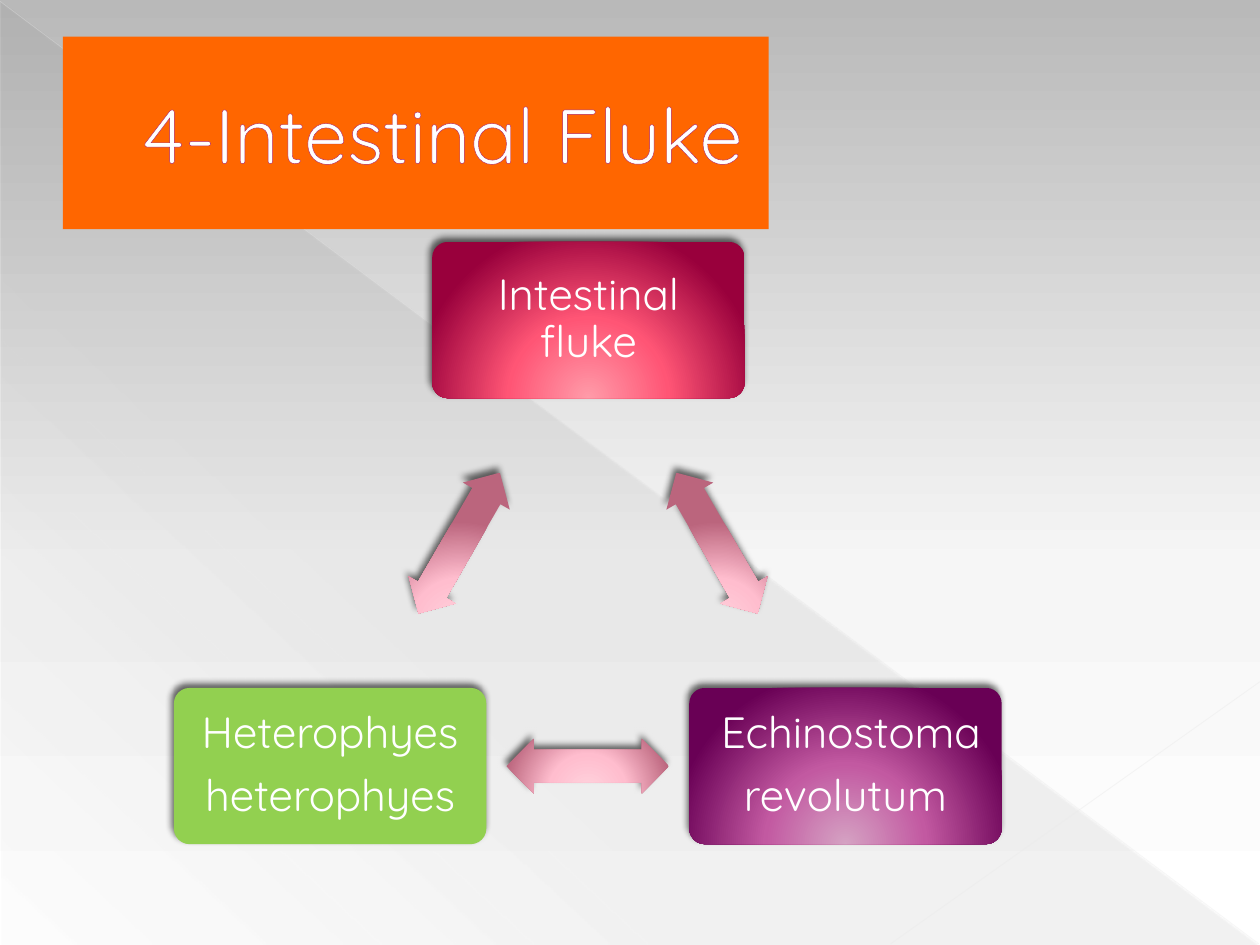
from lxml import etree
from pptx import Presentation
from pptx.dml.color import RGBColor
from pptx.enum.shapes import MSO_CONNECTOR, MSO_SHAPE
from pptx.enum.text import MSO_ANCHOR, PP_ALIGN
from pptx.oxml.ns import qn
from pptx.util import Inches, Pt

RECT = MSO_SHAPE.RECTANGLE
ROUND = MSO_SHAPE.ROUNDED_RECTANGLE
ARROW = MSO_SHAPE.LEFT_RIGHT_ARROW
WEDGE = MSO_SHAPE.RIGHT_TRIANGLE
STRAIGHT = MSO_CONNECTOR.STRAIGHT
MIDDLE = MSO_ANCHOR.MIDDLE
LEFT, CENTER = PP_ALIGN.LEFT, PP_ALIGN.CENTER

FONT = "Quicksand"
COLORS = {
    "white": "FFFFFF", "orange": "FF6600", "edge": "B12761", "green": "92D050",
    "black": "000000", "ray": "E8E8E8", "glint": "EAEAEA",
}
GRADS = {
    "back": [(0, "B9B9B9"), (60, "F6F6F6"), (100, "FFFFFF")],
    "wedge": [(0, "666666", 10), (70, "666666", 8), (100, "666666", 1)],
    "red": [(0, "FF9BA9"), (46, "FF5575"), (100, "99003C")],
    "purple": [(0, "D5A2C3"), (46, "C259A1"), (100, "690055")],
    "pink": [(0, "FFD4DE"), (46, "FFBDCE"), (100, "BB657D")],
}
BOX_W, BOX_H, PAD = 2.48, 1.24, 0.04
ARROW_W, ARROW_H = 1.29, 0.43
NODES = [
    (4.67, 2.54, "red", ["Intestinal fluke"]),
    (6.71, 6.08, "purple", ["Echinostoma ", "revolutum"]),
    (2.62, 6.08, "green", ["Heterophyes", "heterophyes"]),
]


def add_sub(parent, tag, **attrs):
    """Append a drawing element with the given attributes."""
    return etree.SubElement(parent, qn(tag), {k: str(v) for k, v in attrs.items()})


def add_color(parent, color, alpha=100):
    """Append a colour with its opacity in percent."""
    node = add_sub(parent, "a:srgbClr", val=color)
    if alpha < 100:
        add_sub(node, "a:alpha", val=alpha * 1000)


def set_grad(fill, root, name, angle=None):
    """Give a fill a linear gradient, or a glow from below without an angle."""
    fill.gradient()
    grad = root.find(".//" + qn("a:gradFill"))
    for child in list(grad):
        grad.remove(child)
    grad.set("rotWithShape", "0")
    stops = add_sub(grad, "a:gsLst")
    for pos, *color in GRADS[name]:
        add_color(add_sub(stops, "a:gs", pos=pos * 1000), *color)
    if angle is None:
        glow = add_sub(grad, "a:path", path="circle")
        add_sub(glow, "a:fillToRect", l=50000, t=155000, r=50000, b=-55000)
    else:
        add_sub(grad, "a:lin", ang=angle * 60000, scaled=0)


def add_shape(slide, kind, left, top, width, height, fill, angle=None, adj=()):
    """Add a borderless preset shape with a plain or gradient fill."""
    shape = slide.shapes.add_shape(
        kind, Inches(left), Inches(top), Inches(width), Inches(height))
    shape.shadow.inherit = False
    shape.line.fill.background()
    for i, value in enumerate(adj):
        shape.adjustments[i] = value
    if fill in GRADS:
        set_grad(shape.fill, shape._element.spPr, fill, angle)
    else:
        shape.fill.solid()
        shape.fill.fore_color.rgb = RGBColor.from_string(COLORS[fill])
    return shape


def add_shadow(shape):
    """Cast a soft shadow up and to the left."""
    effects = shape._element.spPr.find(qn("a:effectLst"))
    cast = add_sub(effects, "a:outerShdw", blurRad=Pt(4), dist=Pt(3),
                   dir=245 * 60000, rotWithShape=0)
    add_color(cast, COLORS["black"], 60)


def add_line(slide, start, end, color, width, alpha):
    """Add a faint straight line."""
    line = slide.shapes.add_connector(
        STRAIGHT, *[Inches(v) for v in (*start, *end)])
    line.line.color.rgb = RGBColor.from_string(COLORS[color])
    line.line.width = Pt(width)
    props = line._element.spPr
    add_sub(props.find(".//" + qn("a:srgbClr")), "a:alpha", val=alpha * 1000)
    add_sub(props, "a:effectLst")


def set_text(shape, lines, size, align=LEFT, indent=0, inset=None,
             spacing=None, after=None, rtl=False, edge=None):
    """Write lines of white text into a shape."""
    frame = shape.text_frame
    frame.word_wrap = True
    frame.vertical_anchor = MIDDLE
    if inset is not None:
        frame.margin_left = frame.margin_right = Inches(inset)
        frame.margin_top = frame.margin_bottom = Inches(inset)
    for i, text in enumerate(lines):
        para = frame.add_paragraph() if i else frame.paragraphs[0]
        para.alignment = align
        props = para._p.get_or_add_pPr()
        if indent:
            props.set("marL", str(Inches(indent)))
        if rtl:
            props.set("rtl", "1")
        if spacing:
            para.line_spacing = spacing
        if after:
            para.space_after = Pt(0)
            gap = props.find(qn("a:spcAft"))
            gap.remove(gap[0])
            add_sub(gap, "a:spcPct", val=after * 1000)
        run = para.add_run()
        run.text = text
        run.font.name = FONT
        run.font.size = Pt(size)
        run.font.color.rgb = RGBColor.from_string(COLORS["white"])
        if edge:
            rim = add_sub(run.font._element, "a:ln", w=Pt(0.5))
            add_color(add_sub(rim, "a:solidFill"), COLORS[edge])
            run.font._element.insert(0, rim)


def add_node(slide, x, y, fill, lines):
    """Add a rounded box centred on a point, with its label."""
    left, top = x - BOX_W / 2, y - BOX_H / 2
    add_shadow(add_shape(slide, ROUND, left, top, BOX_W, BOX_H, fill, adj=[0.1]))
    label = slide.shapes.add_textbox(
        Inches(left + PAD), Inches(top + PAD),
        Inches(BOX_W - 2 * PAD), Inches(BOX_H - 2 * PAD))
    set_text(label, lines, 25, align=CENTER, inset=0.1, spacing=0.9,
             after=35, rtl=True)


def add_arrow(slide, start, end, turn):
    """Add a double arrow halfway between two nodes."""
    x, y = (start[0] + end[0]) / 2, (start[1] + end[1]) / 2
    arrow = add_shape(slide, ARROW, x - ARROW_W / 2, y - ARROW_H / 2,
                      ARROW_W, ARROW_H, "pink", adj=[0.6, 0.5])
    arrow.rotation = turn
    add_shadow(arrow)


def main():
    """Build the slide and save it."""
    deck = Presentation()
    deck.slide_width, deck.slide_height = Inches(10), Inches(7.5)
    slide = deck.slides.add_slide(deck.slide_layouts[6])
    set_grad(slide.background.fill, slide._element, "back", 90)
    add_shape(slide, WEDGE, 0.01, 0.02, 9.98, 7.48, "wedge", 133)
    add_line(slide, (0, 0.01), (9.99, 7.49), "ray", 0.39, 35)
    add_line(slide, (10, 5.41), (7.07, 7.49), "glint", 0.47, 45)
    title = add_shape(slide, RECT, 0.5, 0.29, 5.6, 1.53, "orange")
    set_text(title, ["4-Intestinal Fluke"], 44, indent=0.53, edge="edge")
    for i, node in enumerate(NODES):
        add_node(slide, *node)
        add_arrow(slide, node, NODES[(i + 1) % len(NODES)], 60 + 120 * i)
    deck.save("out.pptx")


if __name__ == "__main__":
    main()
